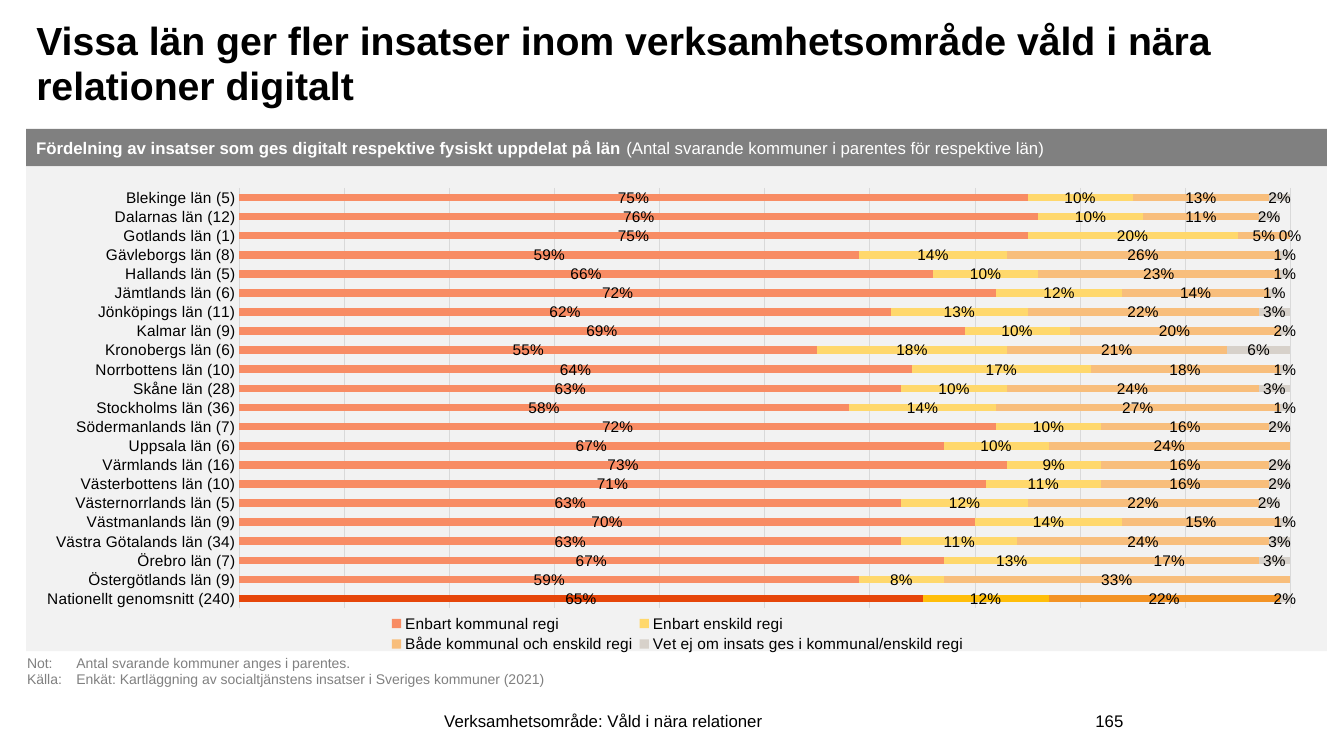
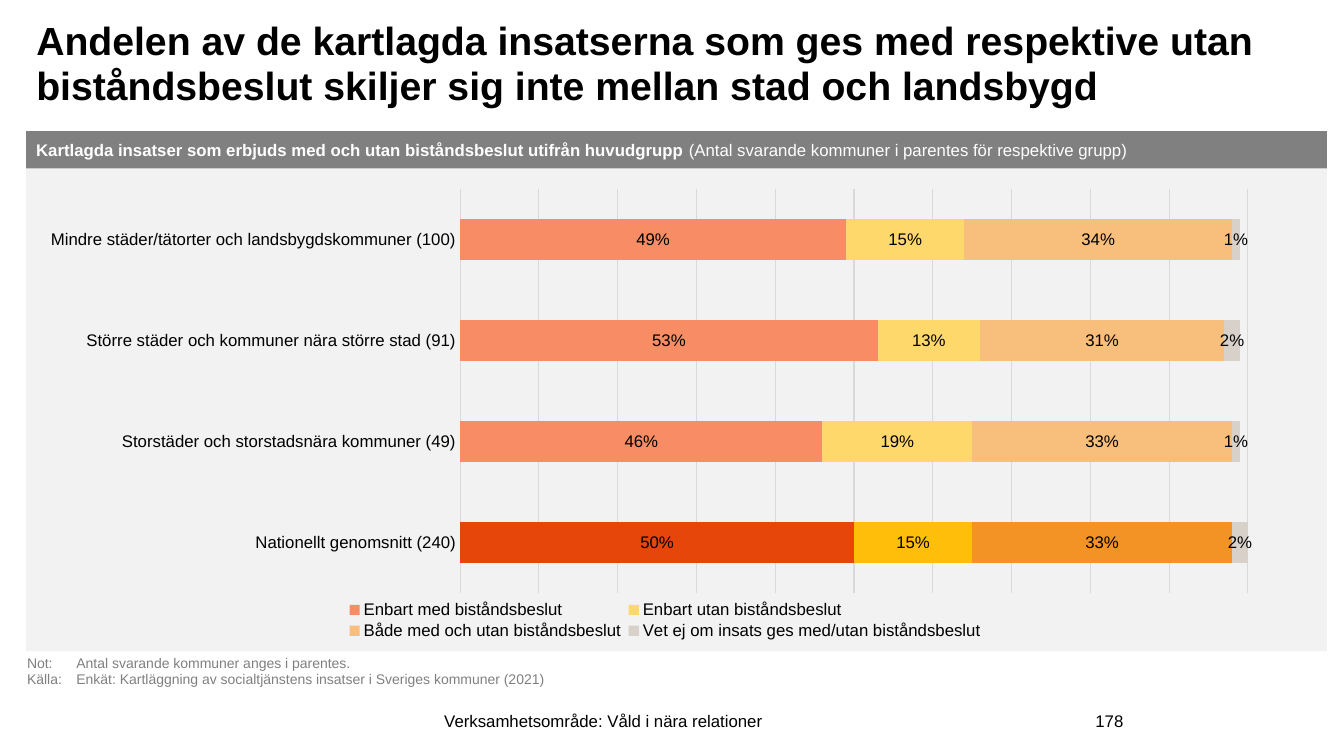
from dataclasses import dataclass

from pptx import Presentation
from pptx.chart.data import CategoryChartData
from pptx.dml.color import RGBColor
from pptx.enum import chart as charts, shapes, text
from pptx.oxml import parse_xml
from pptx.oxml.ns import nsdecls, qn
from pptx.util import Inches, Pt


@dataclass(frozen=True)
class Theme:
    font: str = "Arial"
    black: RGBColor = RGBColor(0, 0, 0)
    white: RGBColor = RGBColor(255, 255, 255)
    grey: RGBColor = RGBColor.from_string("808080")
    panel: RGBColor = RGBColor.from_string("F2F2F2")
    grid: RGBColor = RGBColor.from_string("D9D9D9")
    county_colours: tuple = ("F88C64", "FFD86C", "F8BE7C", "D7D1CA")
    national_colours: tuple = ("E6460A", "FFBE0A", "F39325", "D7D1CA")
    title: Pt = Pt(28)
    body: Pt = Pt(12)
    note: Pt = Pt(10)


theme = Theme()


def style(font, size, colour=theme.black, bold=False):
    font.name = theme.font
    font.size = size
    font.bold = bold
    font.color.rgb = colour


def place(holder, x, y, w, h, target=""):
    for old in holder.findall(qn("c:layout")):
        holder.remove(old)
    inner = f'<c:layoutTarget val="{target}"/>' if target else ""
    sizes = "".join(f'<c:{key} val="{value}"/>' for key, value in zip("xywh", (x, y, w, h)))
    return parse_xml(
        f'<c:layout {nsdecls("c")}><c:manualLayout>{inner}'
        f'<c:xMode val="edge"/><c:yMode val="edge"/>{sizes}</c:manualLayout></c:layout>'
    )


pages = [
    {
        "title": "Vissa län ger fler insatser inom verksamhetsområde våld i nära relationer digitalt",
        "heading": "Fördelning av insatser som ges digitalt respektive fysiskt uppdelat på län ",
        "scope": "(Antal svarande kommuner i parentes för respektive län)",
        "number": "165",
        "band_top": 1.28,
        "chart_box": (0.26, 1.71, 12.9, 4.81),
        "plot": (0.164, 0.032, 0.808, 0.867),
        "legend": (0.276, 0.907, 0.45, 0.09),
        "size": Pt(11),
        "series": ["Enbart kommunal regi", "Enbart enskild regi", "Både kommunal och enskild regi",
                   "Vet ej om insats ges i kommunal/enskild regi"],
        "rows": [
            ("Blekinge län (5)", 75, 10, 13, 2),
            ("Dalarnas län (12)", 76, 10, 11, 2),
            ("Gotlands län (1)", 75, 20, 5, 0),
            ("Gävleborgs län (8)", 59, 14, 26, 1),
            ("Hallands län (5)", 66, 10, 23, 1),
            ("Jämtlands län (6)", 72, 12, 14, 1),
            ("Jönköpings län (11)", 62, 13, 22, 3),
            ("Kalmar län (9)", 69, 10, 20, 2),
            ("Kronobergs län (6)", 55, 18, 21, 6),
            ("Norrbottens län (10)", 64, 17, 18, 1),
            ("Skåne län (28)", 63, 10, 24, 3),
            ("Stockholms län (36)", 58, 14, 27, 1),
            ("Södermanlands län (7)", 72, 10, 16, 2),
            ("Uppsala län (6)", 67, 10, 24, 0),
            ("Värmlands län (16)", 73, 9, 16, 2),
            ("Västerbottens län (10)", 71, 11, 16, 2),
            ("Västernorrlands län (5)", 63, 12, 22, 2),
            ("Västmanlands län (9)", 70, 14, 15, 1),
            ("Västra Götalands län (34)", 63, 11, 24, 3),
            ("Örebro län (7)", 67, 13, 17, 3),
            ("Östergötlands län (9)", 59, 8, 33, None),
            ("Nationellt genomsnitt (240)", 65, 12, 22, 2),
        ],
    },
    {
        "title": "Andelen av de kartlagda insatserna som ges med respektive utan biståndsbeslut "
                 "skiljer sig inte mellan stad och landsbygd",
        "heading": "Kartlagda insatser som erbjuds med och utan biståndsbeslut utifrån huvudgrupp ",
        "scope": "(Antal svarande kommuner i parentes för respektive grupp)",
        "number": "178",
        "band_top": 1.3,
        "chart_box": (0.36, 1.72, 12.44, 4.67),
        "plot": (0.338, 0.033, 0.628, 0.859),
        "legend": (0.244, 0.902, 0.515, 0.095),
        "size": Pt(12),
        "series": ["Enbart med biståndsbeslut", "Enbart utan biståndsbeslut",
                   "Både med och utan biståndsbeslut", "Vet ej om insats ges med/utan biståndsbeslut"],
        "rows": [
            ("Mindre städer/tätorter och landsbygdskommuner (100)", 49, 15, 34, 1),
            ("Större städer och kommuner nära större stad (91)", 53, 13, 31, 2),
            ("Storstäder och storstadsnära kommuner (49)", 46, 19, 33, 1),
            ("Nationellt genomsnitt (240)", 50, 15, 33, 2),
        ],
    },
]

band_height = 0.37
panel_bottom = 6.46

deck = Presentation()
deck.slide_width, deck.slide_height = Inches(13.33), Inches(7.5)

for page in pages:
    slide = deck.slides.add_slide(deck.slide_layouts[5])

    title = slide.shapes.title
    title.left, title.top, title.width, title.height = map(Inches, (0.26, 0.15, 12.35, 1.02))
    title.text_frame.text = page["title"]
    title.text_frame.word_wrap = True
    title.text_frame.auto_size = text.MSO_AUTO_SIZE.NONE
    title.text_frame.vertical_anchor = text.MSO_ANCHOR.TOP
    headline = title.text_frame.paragraphs[0]
    headline.alignment = text.PP_ALIGN.LEFT
    headline.line_spacing = 0.95
    style(headline.font, theme.title, bold=True)

    band_top = page["band_top"]
    panel_top = band_top + band_height
    bars = []
    for top, height, colour in ((panel_top, panel_bottom - panel_top, theme.panel),
                                (band_top, band_height, theme.grey)):
        bar = slide.shapes.add_shape(shapes.MSO_SHAPE.RECTANGLE, Inches(0.26), Inches(top),
                                     Inches(12.9), Inches(height))
        bar.shadow.inherit = False
        bar.fill.solid()
        bar.fill.fore_color.rgb = colour
        bar.line.fill.background()
        bars.append(bar)
    band = bars[-1].text_frame
    band.word_wrap = True
    band.vertical_anchor = text.MSO_ANCHOR.MIDDLE
    caption = band.paragraphs[0]
    caption.alignment = text.PP_ALIGN.LEFT
    for words, bold in ((page["heading"], True), (page["scope"], False)):
        run = caption.add_run()
        run.text = words
        style(run.font, theme.body, theme.white, bold)

    notes = slide.shapes.add_textbox(Inches(0.17), Inches(6.44), Inches(12.64), Inches(0.45)).text_frame
    notes.word_wrap = True
    notes.text = ("Not:\tAntal svarande kommuner anges i parentes.\n"
                  "Källa:\tEnkät: Kartläggning av socialtjänstens insatser i Sveriges kommuner (2021)")
    for line in notes.paragraphs:
        line._p.get_or_add_pPr().append(parse_xml(
            f'<a:tabLst {nsdecls("a")}><a:tab pos="{Inches(0.49)}" algn="l"/></a:tabLst>'))
        style(line.font, theme.note, theme.grey)

    for words, left, width, alignment in (
        ("Verksamhetsområde: Våld i nära relationer", 2.69, 6.59, text.PP_ALIGN.CENTER),
        (page["number"], 9.85, 1.39, text.PP_ALIGN.RIGHT),
    ):
        footer = slide.shapes.add_textbox(Inches(left), Inches(6.95), Inches(width), Inches(0.4)).text_frame
        footer.word_wrap = True
        footer.vertical_anchor = text.MSO_ANCHOR.MIDDLE
        footer.text = words
        footer.paragraphs[0].alignment = alignment
        style(footer.paragraphs[0].font, theme.body)

    names, *columns = zip(*page["rows"])
    shares = CategoryChartData(number_format="0%")
    shares.categories = names
    for name, column in zip(page["series"], columns):
        shares.add_series(name, [None if value is None else value / 100 for value in column])
    chart = slide.shapes.add_chart(charts.XL_CHART_TYPE.BAR_STACKED,
                                   *map(Inches, page["chart_box"]), shares).chart
    style(chart.font, page["size"])
    chart.has_title = False
    chart.has_legend = True
    chart.legend.position = charts.XL_LEGEND_POSITION.BOTTOM
    chart.legend.include_in_layout = False
    style(chart.legend.font, page["size"])

    regions = chart.category_axis
    regions.reverse_order = True
    regions.major_tick_mark = charts.XL_TICK_MARK.NONE
    regions.format.line.color.rgb = theme.grid
    regions.format.line.width = Pt(0.75)
    style(regions.tick_labels.font, page["size"])

    percent = chart.value_axis
    percent.visible = False
    percent.minimum_scale, percent.maximum_scale, percent.major_unit = 0, 1, 0.1
    percent.has_major_gridlines = True
    percent.major_gridlines.format.line.color.rgb = theme.grid
    percent.major_gridlines.format.line.width = Pt(0.75)

    plot = chart.plots[0]
    plot.gap_width, plot.overlap = 150, 100
    plot.vary_by_categories = False
    for series, county, national in zip(plot.series, theme.county_colours, theme.national_colours):
        national_bar = series.points[len(names) - 1]
        for fill, colour in ((series.format.fill, county), (national_bar.format.fill, national)):
            fill.solid()
            fill.fore_color.rgb = RGBColor.from_string(colour)
        labels = series.data_labels
        labels.show_value = True
        labels.position = charts.XL_LABEL_POSITION.CENTER
        labels.number_format = "0%"
        labels.number_format_is_linked = False
        style(labels.font, page["size"])

    area = chart.element.find(".//" + qn("c:plotArea"))
    area.insert(0, place(area, *page["plot"], target="inner"))
    legend = chart.element.find(".//" + qn("c:legend"))
    legend.find(qn("c:legendPos")).addnext(place(legend, *page["legend"]))

deck.save("out.pptx")
